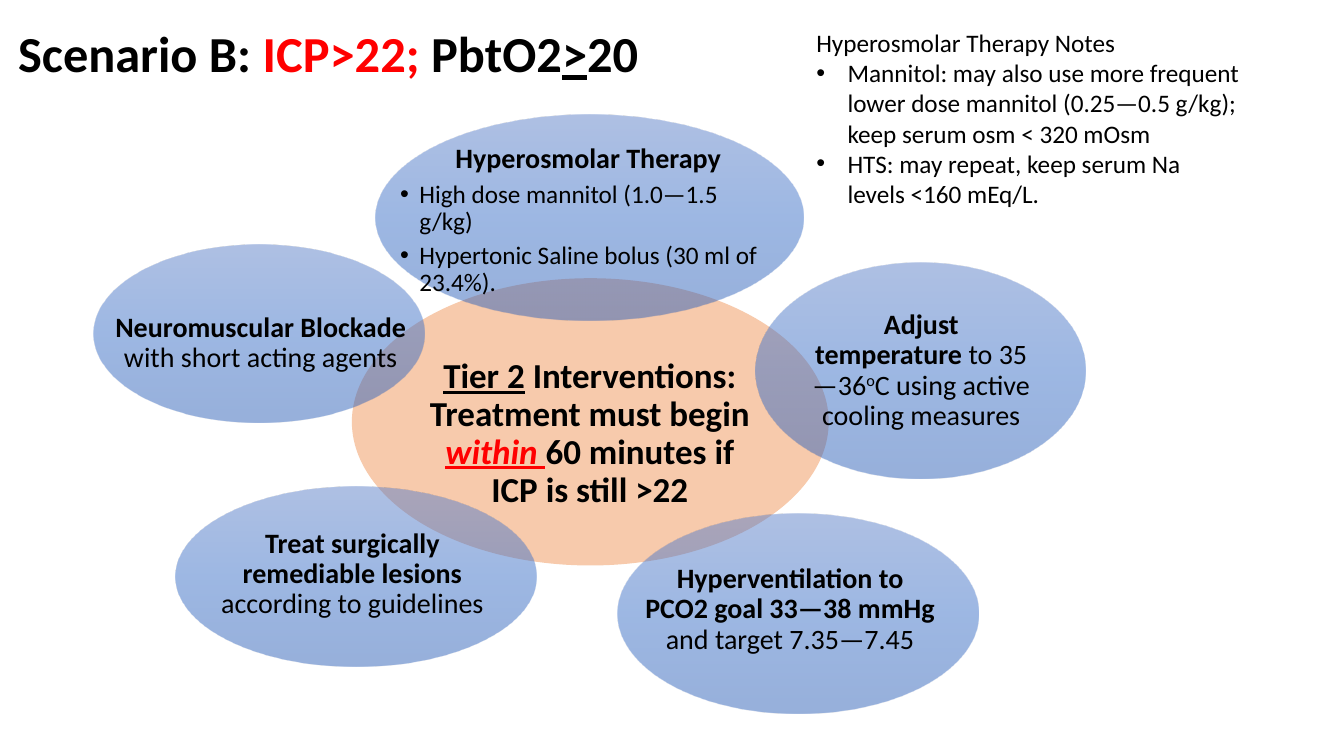
from lxml.etree import SubElement
from pptx import Presentation
from pptx.dml.color import RGBColor
from pptx.enum.shapes import MSO_SHAPE
from pptx.enum.text import MSO_ANCHOR, MSO_AUTO_SIZE, PP_ALIGN
from pptx.oxml.ns import qn
from pptx.util import Inches, Pt

ELLIPSE = MSO_SHAPE.OVAL
MIDDLE, BOTTOM = MSO_ANCHOR.MIDDLE, MSO_ANCHOR.BOTTOM
LEFT, CENTER = PP_ALIGN.LEFT, PP_ALIGN.CENTER
NO_FIT = MSO_AUTO_SIZE.NONE

BLACK = RGBColor(0x00, 0x00, 0x00)
RED = RGBColor(0xFF, 0x00, 0x00)
PEACH = RGBColor(0xF7, 0xCA, 0xAC)
BLUES = (
    (0, RGBColor(0x5E, 0x81, 0xC9)),
    (50, RGBColor(0x3B, 0x70, 0xC9)),
    (100, RGBColor(0x2E, 0x60, 0xB8)),
)
OPACITY = 50
FONT = "Calibri"
SLIDE_BOX = (0, 0, Inches(13.33), Inches(7.5))

TITLE_AREA = (0.6, 1.07, 73.8, 10.67)
NOTES_AREA = (60, 2.93, 33.08, 25.6)
CENTER_AREA = (26.18, 36.8, 35.48, 38)
CENTER_TEXT_AREA = (14.6, 13.7, 70.6, 81.1)

PLAIN = {"bold": False}
TITLE = [
    ("Scenario B: ", {}),
    ("ICP>22; ", {"color": RED}),
    ("PbtO2", {}),
    (">", {"underline": True}),
    ("20", {}),
]
CENTER_TEXT = [
    ("Tier 2", {"underline": True}),
    (" Interventions: Treatment must begin ", {}),
    ("within ", {"color": RED, "italic": True, "underline": True}),
    ("60 minutes if ICP is still >22", {}),
]
INTERVENTIONS = [
    ((27.98, 15.2, 31.8, 27.2), (4.95, 8.3, 89.4, 86.3),
     [("Hyperosmolar Therapy", {})],
     ["High dose mannitol (1.0—1.5 g/kg)",
      "Hypertonic Saline bolus (30 ml of 23.4%)."]),
    ((56.18, 34.8, 24.6, 28.53), (14.9, 12.6, 70.7, 74.8),
     [("Adjust temperature ", {}), ("to 35—36", PLAIN),
      ("o", {"bold": False, "superscript": True}),
      ("C using active cooling measures", PLAIN)], []),
    ((45.98, 68, 26.85, 26.4), (6.1, 7.6, 83.2, 80.8),
     [("Hyperventilation to PCO2 goal 33—38 mmHg ", {}),
      ("and target 7.35—7.45", PLAIN)], []),
    ((13.05, 64.4, 26.85, 23.73), (7.3, -1.1, 83.5, 100),
     [("Treat surgically remediable lesions ", {}),
      ("according to guidelines", PLAIN)], []),
    ((6.98, 32.4, 24.6, 23.47), (3.7, 18.2, 93.6, 75),
     [("Neuromuscular Blockade ", {}),
      ("with short acting agents", PLAIN)], []),
]
NOTES = [
    "Mannitol: may also use more frequent lower dose mannitol "
    "(0.25—0.5 g/kg); keep serum osm < 320 mOsm",
    "HTS: may repeat, keep serum Na levels <160 mEq/L.",
]


def within(box, percents):
    left, top, width, height = box
    x, y, w, h = (percent / 100 for percent in percents)
    return (round(left + x * width), round(top + y * height),
            round(w * width), round(h * height))


def write_paragraph(paragraph, runs, size, bold=False, align=LEFT, spacing=1.0):
    paragraph.alignment = align
    paragraph.line_spacing = spacing
    font = paragraph.font
    font.name, font.size, font.bold = FONT, Pt(size), bold
    font.color.rgb = BLACK
    for text, style in runs:
        run = paragraph.add_run()
        run.text = text
        for name, value in style.items():
            if name == "color":
                run.font.color.rgb = value
            elif name == "superscript":
                run.font._element.set("baseline", "30000")
            else:
                setattr(run.font, name, value)


def add_bullets(frame, items, indent, spacing=1.0, before=0):
    for item in items:
        paragraph = frame.add_paragraph()
        properties = paragraph._p.get_or_add_pPr()
        properties.set("marL", str(Inches(indent)))
        properties.set("indent", str(-Inches(indent)))
        SubElement(properties, qn("a:buFont"), typeface="Arial")
        SubElement(properties, qn("a:buChar"), char="•")
        paragraph.space_before = Pt(before)
        write_paragraph(paragraph, [(item, {})], 18, spacing=spacing)


def add_text_frame(slide, box):
    frame = slide.shapes.add_textbox(*box).text_frame
    frame.word_wrap = True
    return frame


def add_ellipse(slide, box):
    shape = slide.shapes.add_shape(ELLIPSE, *box)
    shape.shadow.inherit = False
    shape.line.fill.background()
    return shape


def fill_with_blues(shape):
    shape.fill.gradient()
    shape.fill.gradient_angle = 270
    stops = shape._element.spPr.find(".//" + qn("a:gsLst"))
    for stop in list(stops):
        stops.remove(stop)
    for position, color in BLUES:
        stop = SubElement(stops, qn("a:gs"), pos=str(position * 1000))
        shade = SubElement(stop, qn("a:srgbClr"), val=str(color))
        SubElement(shade, qn("a:alpha"), val=str(OPACITY * 1000))


def add_ellipse_text(slide, box, runs, size):
    frame = add_text_frame(slide, box)
    frame.vertical_anchor = MIDDLE
    frame.margin_left = frame.margin_right = Inches(0.03)
    frame.margin_top = frame.margin_bottom = Inches(0.03)
    write_paragraph(frame.paragraphs[0], runs, size, True, CENTER, 0.9)
    return frame


def add_title(slide, box):
    title = slide.shapes.title
    title.left, title.top, title.width, title.height = box
    frame = title.text_frame
    frame.auto_size = NO_FIT
    frame.word_wrap = True
    frame.vertical_anchor = BOTTOM
    write_paragraph(frame.paragraphs[0], TITLE, 36, True, spacing=0.9)


def add_center(slide, box):
    add_ellipse(slide, box).fill.solid()
    slide.shapes[-1].fill.fore_color.rgb = PEACH
    add_ellipse_text(slide, within(box, CENTER_TEXT_AREA), CENTER_TEXT, 25)


def add_intervention(slide, box, text_area, heading, bullets):
    fill_with_blues(add_ellipse(slide, box))
    frame = add_ellipse_text(slide, within(box, text_area), heading, 20)
    add_bullets(frame, bullets, 0.19, 0.9, 4.9)


def add_notes(slide, box):
    frame = add_text_frame(slide, box)
    write_paragraph(frame.paragraphs[0], [("Hyperosmolar Therapy Notes", {})], 18)
    add_bullets(frame, NOTES, 0.31)


def main():
    presentation = Presentation()
    presentation.slide_width, presentation.slide_height = SLIDE_BOX[2:]
    slide = presentation.slides.add_slide(presentation.slide_layouts[5])
    add_title(slide, within(SLIDE_BOX, TITLE_AREA))
    add_center(slide, within(SLIDE_BOX, CENTER_AREA))
    for area, text_area, heading, bullets in INTERVENTIONS:
        add_intervention(slide, within(SLIDE_BOX, area), text_area, heading, bullets)
    add_notes(slide, within(SLIDE_BOX, NOTES_AREA))
    presentation.save("out.pptx")


if __name__ == "__main__":
    main()
